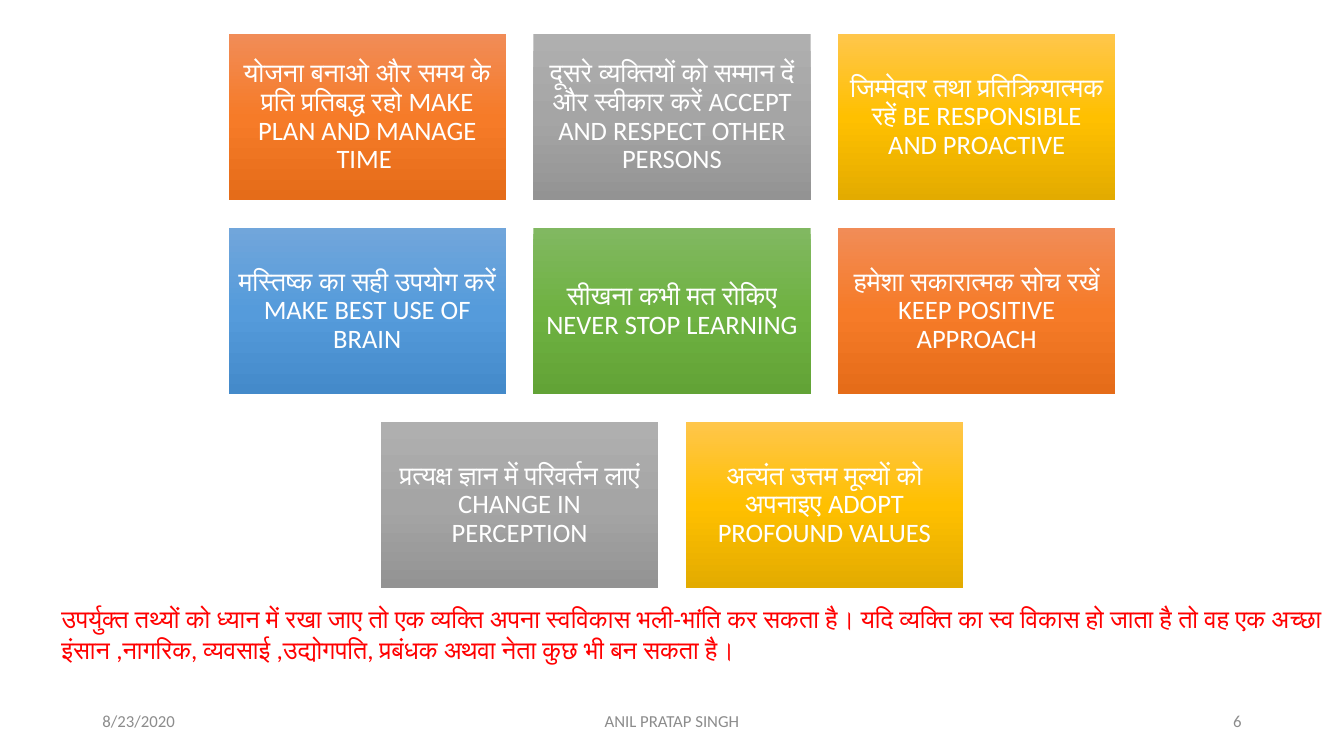
from copy import deepcopy
from pptx import Presentation
from pptx.dml.color import RGBColor
from pptx.enum.shapes import MSO_SHAPE as Shape
from pptx.enum.text import MSO_ANCHOR as Anchor, MSO_AUTO_SIZE as Auto, PP_ALIGN as Align
from pptx.oxml.ns import qn
from pptx.util import Cm, Pt

WHITE = RGBColor(0xFF, 0xFF, 0xFF)
RED = RGBColor(0xFF, 0x00, 0x00)
GRAY = RGBColor(0x8C, 0x8C, 0x8C)
ORANGE = [RGBColor(0xF1, 0x8C, 0x57), RGBColor(0xF6, 0x7B, 0x28), RGBColor(0xE5, 0x6C, 0x19)]
SILVER = [RGBColor(0xAF, 0xAF, 0xAF), RGBColor(0xA5, 0xA5, 0xA5), RGBColor(0x93, 0x93, 0x93)]
GOLD = [RGBColor(0xFF, 0xC6, 0x4B), RGBColor(0xFF, 0xC0, 0x00), RGBColor(0xE3, 0xAB, 0x00)]
BLUE = [RGBColor(0x71, 0xA6, 0xDB), RGBColor(0x55, 0x9B, 0xDB), RGBColor(0x44, 0x8A, 0xCA)]
GREEN = [RGBColor(0x81, 0xB8, 0x61), RGBColor(0x6F, 0xB2, 0x42), RGBColor(0x62, 0xA3, 0x36)]

WIDE, HIGH = 33.87, 19.05
CARD_W, CARD_H = 6.99, 4.19
STEP_X, STEP_Y, TOP = 7.68, 4.89, 0.86

ROWS = [
    [("योजना बनाओ और समय के प्रति प्रतिबद्ध रहो ", "MAKE PLAN AND MANAGE TIME ", ORANGE),
     ("दूसरे व्यक्तियों को सम्मान दें और स्वीकार करें ", "ACCEPT AND RESPECT OTHER PERSONS", SILVER),
     ("जिम्मेदार तथा प्रतिक्रियात्मक रहें ", "BE RESPONSIBLE AND PROACTIVE", GOLD)],
    [("मस्तिष्क का सही उपयोग करें ", "MAKE BEST USE OF BRAIN", BLUE),
     ("सीखना कभी मत रोकिए ", "NEVER STOP LEARNING", GREEN),
     ("हमेशा सकारात्मक सोच रखें ", "KEEP POSITIVE APPROACH", ORANGE)],
    [("प्रत्यक्ष ज्ञान में परिवर्तन लाएं ", "CHANGE IN PERCEPTION", SILVER),
     ("अत्यंत उत्तम मूल्यों को अपनाइए ", "ADOPT PROFOUND VALUES", GOLD)],
]
NOTE = ("उपर्युक्त तथ्यों को ध्यान में रखा जाए तो एक व्यक्ति अपना स्वविकास भली-भांति कर सकता है। "
        "यदि व्यक्ति का स्व विकास हो जाता है तो वह एक अच्छा इंसान ,नागरिक, व्यवसाई ,उद्योगपति, "
        "प्रबंधक अथवा नेता कुछ भी बन सकता है।")
FOOT = [("8/23/2020", 2.33, 7.62, Align.LEFT),
        ("ANIL PRATAP SINGH", 11.22, 11.43, Align.CENTER),
        ("6", 23.92, 7.62, Align.RIGHT)]


class Deck:
    """Hold the text style and the current slide, and draw its elements."""

    def __init__(self, slide, font):
        self.slide = slide
        self.font = font

    def fill_text(self, frame, runs, size, color, align):
        frame.word_wrap = True
        para = frame.paragraphs[0]
        para.alignment = align
        for text in runs:
            run = para.add_run()
            run.text = text
            run.font.name = self.font
            run.font.size = Pt(size)
            run.font.color.rgb = color
        return para

    def label(self, text, box, size, color, align=Align.LEFT, anchor=Anchor.TOP):
        frame = self.slide.shapes.add_textbox(*map(Cm, box)).text_frame
        self.fill_text(frame, [text], size, color, align)
        frame.vertical_anchor = anchor
        return frame

    def shade(self, card, tones):
        card.fill.gradient()
        card.fill.gradient_angle = 270
        stops = card._element.spPr.find(qn("a:gradFill")).find(qn("a:gsLst"))
        stops.insert(1, deepcopy(stops[0]))
        for i, stop in enumerate(card.fill.gradient_stops):
            stop.position = i / 2
            stop.color.rgb = tones[i]

    def card(self, left, top, runs, tones):
        box = map(Cm, (left, top, CARD_W, CARD_H))
        card = self.slide.shapes.add_shape(Shape.RECTANGLE, *box)
        card.shadow.inherit = False
        card.line.fill.background()
        self.shade(card, tones)
        frame = card.text_frame
        frame.vertical_anchor = Anchor.MIDDLE
        frame.margin_left = frame.margin_right = Cm(0.2)
        frame.margin_top = frame.margin_bottom = Cm(0.2)
        self.fill_text(frame, runs, 19, WHITE, Align.CENTER).line_spacing = 0.9


def main():
    show = Presentation()
    show.slide_width, show.slide_height = Cm(WIDE), Cm(HIGH)
    deck = Deck(show.slides.add_slide(show.slide_layouts[6]), "Calibri")
    for text, left, width, align in FOOT:
        deck.label(text, (left, 17.65, width, 1.02), 12, GRAY, align, Anchor.MIDDLE)
    deck.label(NOTE, (1.3, 15.09, 32.58, 1.8), 18, RED).auto_size = Auto.SHAPE_TO_FIT_TEXT
    for r, row in enumerate(ROWS):
        start = (WIDE - CARD_W - STEP_X * (len(row) - 1)) / 2
        for c, (hindi, english, tones) in enumerate(row):
            deck.card(start + c * STEP_X, TOP + r * STEP_Y, [hindi, english], tones)
    show.save("out.pptx")


if __name__ == "__main__":
    main()
